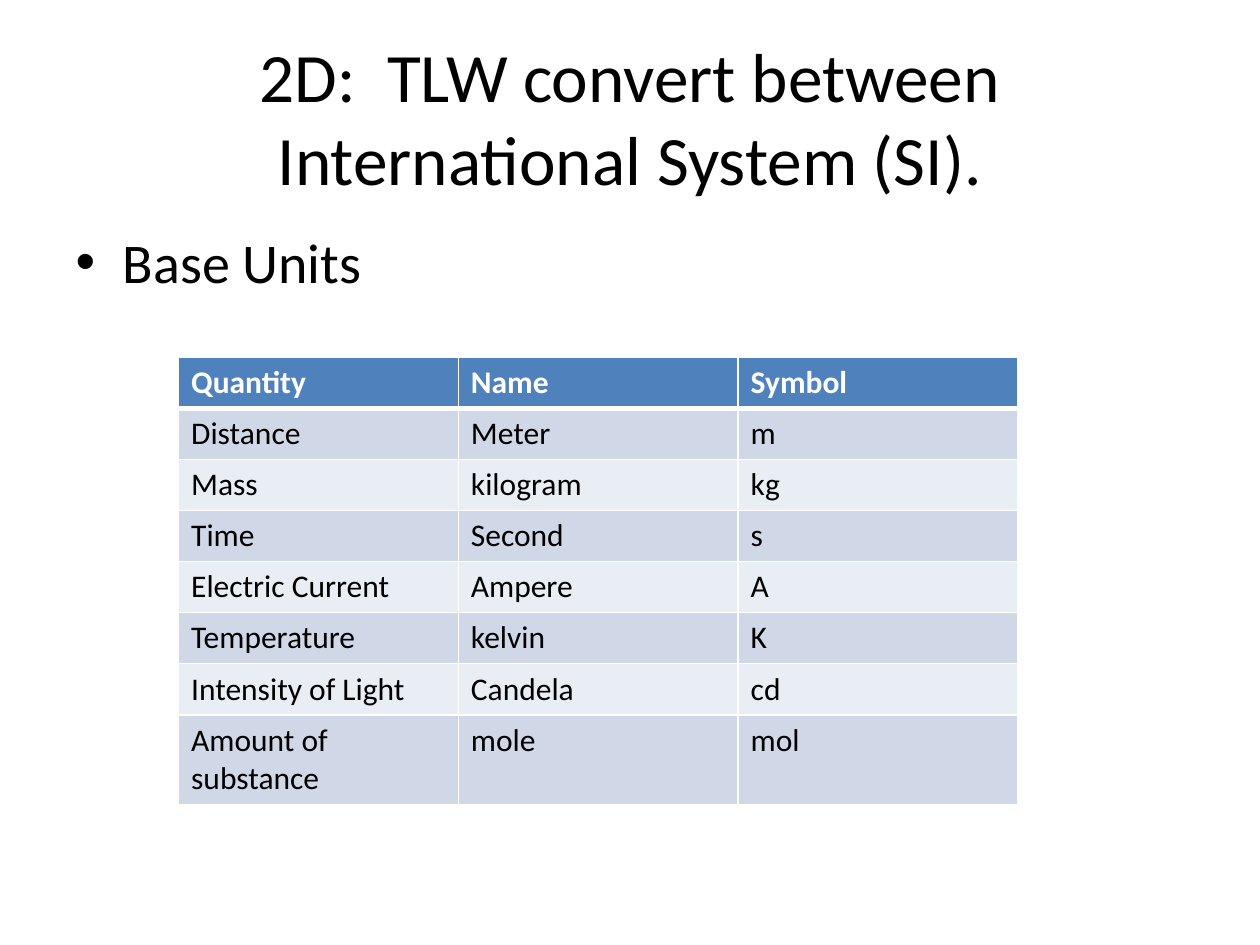
from lxml import etree
from pptx import Presentation
from pptx.dml.color import RGBColor
from pptx.enum.text import MSO_ANCHOR, PP_ALIGN
from pptx.oxml.ns import qn
from pptx.util import Cm, Pt

CENTER, LEFT = PP_ALIGN.CENTER, PP_ALIGN.LEFT
MIDDLE = MSO_ANCHOR.MIDDLE
BLACK, WHITE = "000000", "FFFFFF"
HEADER_FILL = "4F81BD"
BAND_FILLS = ["D0D8E8", "E9EDF4"]
ROWS = [
    ["Quantity", "Name", "Symbol"],
    ["Distance", "Meter", "m"],
    ["Mass", "kilogram", "kg"],
    ["Time", "Second", "s"],
    ["Electric Current", "Ampere", "A"],
    ["Temperature", "kelvin", "K"],
    ["Intensity of Light", "Candela", "cd"],
    ["Amount of substance", "mole", "mol"],
]
COLUMN_WIDTH, ROW_HEIGHT = Cm(5.64), Cm(1.03)


def write_text(text_frame, text, size=18, color=BLACK, bold=False, align=LEFT):
    paragraph = text_frame.paragraphs[0]
    run = paragraph.add_run()
    run.text = text
    paragraph.alignment = align
    paragraph.space_before = Pt(0)
    run.font.name = "Calibri"
    run.font.size = Pt(size)
    run.font.bold = bold
    run.font.color.rgb = RGBColor.from_string(color)


def set_borders(cell, color, bottom_width):
    """Draw 1 pt borders, with a width of its own for the bottom one."""
    properties = cell._tc.get_or_add_tcPr()
    widths = {"a:lnL": 1, "a:lnR": 1, "a:lnT": 1, "a:lnB": bottom_width}
    for position, (tag, width) in enumerate(widths.items()):
        line = etree.Element(qn(tag), w=str(Pt(width)))
        fill = etree.SubElement(line, qn("a:solidFill"))
        etree.SubElement(fill, qn("a:srgbClr"), val=color)
        properties.insert(position, line)


presentation = Presentation()
presentation.slide_width, presentation.slide_height = Cm(25.4), Cm(19.05)
slide = presentation.slides.add_slide(presentation.slide_layouts[1])

title = slide.shapes.title
title.left, title.top, title.width, title.height = Cm(1.27), Cm(0.76), Cm(22.86), Cm(3.18)
title.text_frame.vertical_anchor = MIDDLE
write_text(title.text_frame, "2D:  TLW convert between International System (SI).",
           size=39.6, align=CENTER)

body = slide.placeholders[1]
body.left, body.top, body.width, body.height = Cm(1.27), Cm(4.45), Cm(22.86), Cm(1.7)
write_text(body.text_frame, "Base Units", size=32)

column_count = len(ROWS[0])
table = slide.shapes.add_table(
    len(ROWS), column_count, Cm(3.6), Cm(7.2),
    COLUMN_WIDTH * column_count, ROW_HEIGHT * len(ROWS)).table
for column in table.columns:
    column.width = COLUMN_WIDTH
for row_index, texts in enumerate(ROWS):
    is_header = row_index == 0
    fill_color = HEADER_FILL if is_header else BAND_FILLS[(row_index - 1) % 2]
    table.rows[row_index].height = ROW_HEIGHT
    for column_index, text in enumerate(texts):
        cell = table.cell(row_index, column_index)
        cell.fill.solid()
        cell.fill.fore_color.rgb = RGBColor.from_string(fill_color)
        set_borders(cell, WHITE, bottom_width=3 if is_header else 1)
        write_text(cell.text_frame, text, color=WHITE if is_header else BLACK, bold=is_header)

presentation.save("out.pptx")
